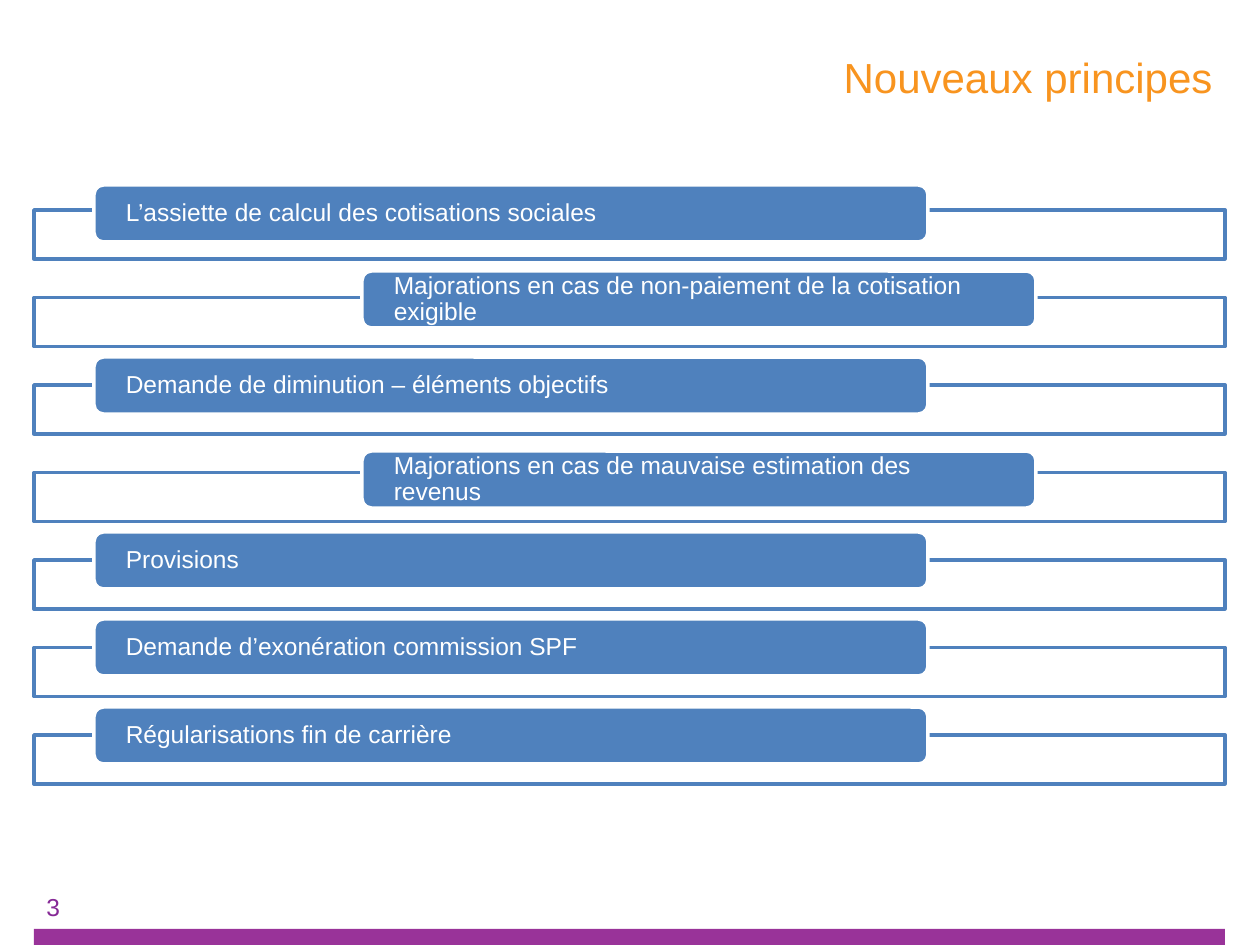
from dataclasses import dataclass

from pptx import Presentation
from pptx.dml.color import RGBColor
from pptx.enum.shapes import MSO_SHAPE
from pptx.enum.text import MSO_ANCHOR, PP_ALIGN
from pptx.shapes.autoshape import Shape
from pptx.slide import Slide
from pptx.text.text import TextFrame
from pptx.util import Emu, Pt

EMU_PER_PX = 914400 / 126
COLORS = {
    "white": "FFFFFF",
    "blue": "4F81BD",
    "orange": "F8941F",
    "bar": "993399",
    "number": "862996",
}
MARGIN_LEFT, CONTENT_WIDTH = 34, 1191
FIRST_FRAME_TOP, FRAME_HEIGHT = 210, 49
FRAME_PITCH = 87.5
LABEL_HEIGHT = 57


@dataclass(frozen=True)
class Principle:
    text: str
    label_top: int
    indented: bool = False


PRINCIPLES = [
    Principle("L’assiette de calcul des cotisations sociales", 185),
    Principle("Majorations en cas de non-paiement de la cotisation exigible", 271, True),
    Principle("Demande de diminution – éléments objectifs", 357),
    Principle("Majorations en cas de mauvaise estimation des revenus", 451, True),
    Principle("Provisions", 532),
    Principle("Demande d’exonération commission SPF", 619),
    Principle("Régularisations fin de carrière", 707),
]


def px(length: float) -> Emu:
    return Emu(round(length * EMU_PER_PX))


def rgb(name: str) -> RGBColor:
    return RGBColor.from_string(COLORS[name])


def box(left: float, top: float, width: float, height: float) -> tuple[Emu, ...]:
    return px(left), px(top), px(width), px(height)


def write_text(frame: TextFrame, text: str, *, size: int = 14, color: str = "white",
               align: PP_ALIGN = PP_ALIGN.LEFT, anchor: MSO_ANCHOR = MSO_ANCHOR.MIDDLE,
               line_spacing: float = 1.0) -> None:
    frame.word_wrap = True
    frame.vertical_anchor = anchor
    paragraph = frame.paragraphs[0]
    paragraph.alignment = align
    paragraph.line_spacing = line_spacing
    run = paragraph.add_run()
    run.text = text
    run.font.name = "Arial"
    run.font.size = Pt(size)
    run.font.color.rgb = rgb(color)


def add_box(slide: Slide, kind: MSO_SHAPE, bounds: tuple[Emu, ...], *, fill: str,
            line: str | None = None) -> Shape:
    shape = slide.shapes.add_shape(kind, *bounds)
    shape.shadow.inherit = False
    shape.fill.solid()
    shape.fill.fore_color.rgb = rgb(fill)
    if line is None:
        shape.line.fill.background()
    else:
        shape.line.color.rgb = rgb(line)
        shape.line.width = Pt(2)
    return shape


def add_principle(slide: Slide, index: int, principle: Principle) -> None:
    frame_top = FIRST_FRAME_TOP + index * FRAME_PITCH
    add_box(slide, MSO_SHAPE.RECTANGLE,
            box(MARGIN_LEFT, frame_top, CONTENT_WIDTH, FRAME_HEIGHT),
            fill="white", line="blue")
    left, width = (362, 674) if principle.indented else (94, 834)
    label = add_box(slide, MSO_SHAPE.ROUNDED_RECTANGLE,
                    box(left, principle.label_top, width, LABEL_HEIGHT),
                    fill="blue", line="white")
    text_frame = label.text_frame
    text_frame.margin_left = text_frame.margin_right = px(29)
    text_frame.margin_top = text_frame.margin_bottom = 0
    write_text(text_frame, principle.text, line_spacing=0.9)


def main() -> None:
    presentation = Presentation()
    presentation.slide_width, presentation.slide_height = px(1260), px(945)
    slide = presentation.slides.add_slide(presentation.slide_layouts[5])

    add_box(slide, MSO_SHAPE.RECTANGLE, box(MARGIN_LEFT, 929, CONTENT_WIDTH, 16), fill="bar")

    title = slide.shapes.title
    title.left, title.top, title.width, title.height = box(289, 0, 936, 154)
    write_text(title.text_frame, "Nouveaux principes", size=24, color="orange",
               align=PP_ALIGN.RIGHT)

    for index, principle in enumerate(PRINCIPLES):
        add_principle(slide, index, principle)

    page_number = slide.shapes.add_textbox(*box(MARGIN_LEFT, 886, 253, 63))
    write_text(page_number.text_frame, "3", color="number", anchor=MSO_ANCHOR.TOP)

    presentation.save("out.pptx")


if __name__ == "__main__":
    main()
